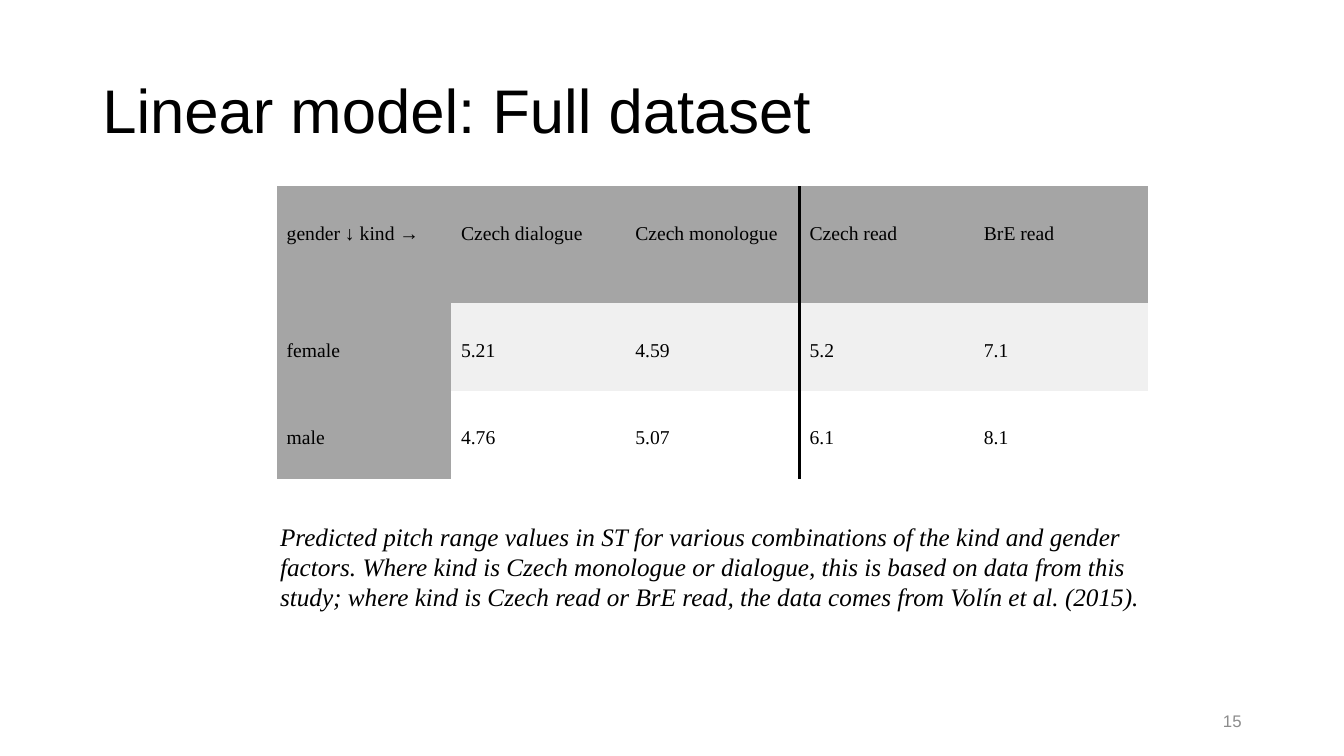
from dataclasses import dataclass

from lxml.etree import SubElement
from pptx import Presentation
from pptx.dml.color import RGBColor
from pptx.enum.text import MSO_ANCHOR as Anchor, PP_ALIGN as Align
from pptx.oxml.ns import qn
from pptx.slide import Slide
from pptx.table import _Cell as Cell
from pptx.text.text import TextFrame
from pptx.util import Pt

BLACK = RGBColor(0x00, 0x00, 0x00)
WHITE = RGBColor(0xFF, 0xFF, 0xFF)
HEADER_GRAY = RGBColor(0xA5, 0xA5, 0xA5)
BAND_GRAY = RGBColor(0xF0, 0xF0, 0xF0)
NUMBER_GRAY = RGBColor(0x8C, 0x8C, 0x8C)
SANS = "Arial"
SERIF = "Times New Roman"

COLUMN_WIDTH = 124.5
DIVIDER_COLUMN = 3  # the heavy line runs left of this column
DIVIDER_WIDTH = 3


@dataclass(frozen=True)
class Box:
    left: float
    top: float
    width: float
    height: float


@dataclass(frozen=True)
class Row:
    height: float
    fill: RGBColor
    values: tuple[str, ...]


ROWS = (
    Row(83.6, HEADER_GRAY,
        ("gender ↓ kind →", "Czech dialogue", "Czech monologue", "Czech read", "BrE read")),
    Row(62.8, BAND_GRAY, ("female", "5.21", "4.59", "5.2", "7.1")),
    Row(62.8, WHITE, ("male", "4.76", "5.07", "6.1", "8.1")),
)
CAPTION = (
    "Predicted pitch range values in ST for various combinations of the kind and "
    "gender factors. Where kind is Czech monologue or dialogue, this is based on data "
    "from this study; where kind is Czech read or BrE read, the data comes from "
    "Volín et al. (2015)."
)


def write_text(frame: TextFrame, text: str, *, size: float, font: str = SERIF,
               color: RGBColor = BLACK, italic: bool = False,
               align: Align = Align.LEFT, line_spacing: float = 1.0) -> None:
    paragraph = frame.paragraphs[0]
    paragraph.alignment = align
    paragraph.line_spacing = line_spacing
    run = paragraph.add_run()
    run.text = text
    run.font.size = Pt(size)
    run.font.name = font
    run.font.italic = italic
    run.font.color.rgb = color


def add_frame(slide: Slide, box: Box, anchor: Anchor = Anchor.TOP) -> TextFrame:
    """Add a wrapping text box and return its text frame."""
    shape = slide.shapes.add_textbox(
        Pt(box.left), Pt(box.top), Pt(box.width), Pt(box.height))
    frame = shape.text_frame
    frame.word_wrap = True
    frame.vertical_anchor = anchor
    return frame


def set_borders(cell: Cell, heavy_side: str | None) -> None:
    """Clear every border except a heavy one; call before setting the fill."""
    properties = cell._tc.get_or_add_tcPr()
    for side in ("L", "R", "T", "B"):
        line = SubElement(properties, qn(f"a:ln{side}"))
        if side == heavy_side:
            line.set("w", str(Pt(DIVIDER_WIDTH)))
            fill = SubElement(line, qn("a:solidFill"))
            SubElement(fill, qn("a:srgbClr")).set("val", str(BLACK))
        else:
            SubElement(line, qn("a:noFill"))


def add_pitch_table(slide: Slide, left: float, top: float) -> None:
    column_count = len(ROWS[0].values)
    table = slide.shapes.add_table(
        len(ROWS), column_count, Pt(left), Pt(top),
        Pt(COLUMN_WIDTH * column_count), Pt(sum(row.height for row in ROWS))).table
    table.first_row = table.horz_banding = False
    for column in table.columns:
        column.width = Pt(COLUMN_WIDTH)
    heavy_sides = {DIVIDER_COLUMN - 1: "R", DIVIDER_COLUMN: "L"}
    for row_index, row in enumerate(ROWS):
        table.rows[row_index].height = Pt(row.height)
        for column_index, value in enumerate(row.values):
            cell = table.cell(row_index, column_index)
            set_borders(cell, heavy_sides.get(column_index))
            cell.fill.solid()
            cell.fill.fore_color.rgb = HEADER_GRAY if column_index == 0 else row.fill
            cell.margin_top = Pt(26)
            write_text(cell.text_frame, value, size=14)


def main() -> None:
    presentation = Presentation()
    presentation.slide_width = Pt(960)
    presentation.slide_height = Pt(540)
    slide = presentation.slides.add_slide(presentation.slide_layouts[6])

    title = add_frame(slide, Box(66, 28.8, 828, 104.4), Anchor.MIDDLE)
    write_text(title, "Linear model: Full dataset", size=44, font=SANS, line_spacing=0.9)
    add_pitch_table(slide, 197.6, 133)
    caption = add_frame(slide, Box(193, 368.6, 631.4, 93.6))
    write_text(caption, CAPTION, size=18, italic=True)
    number = add_frame(slide, Box(678, 500.5, 216, 28.8), Anchor.MIDDLE)
    write_text(number, "15", size=12, font=SANS, color=NUMBER_GRAY, align=Align.RIGHT)

    presentation.save("out.pptx")


if __name__ == "__main__":
    main()
